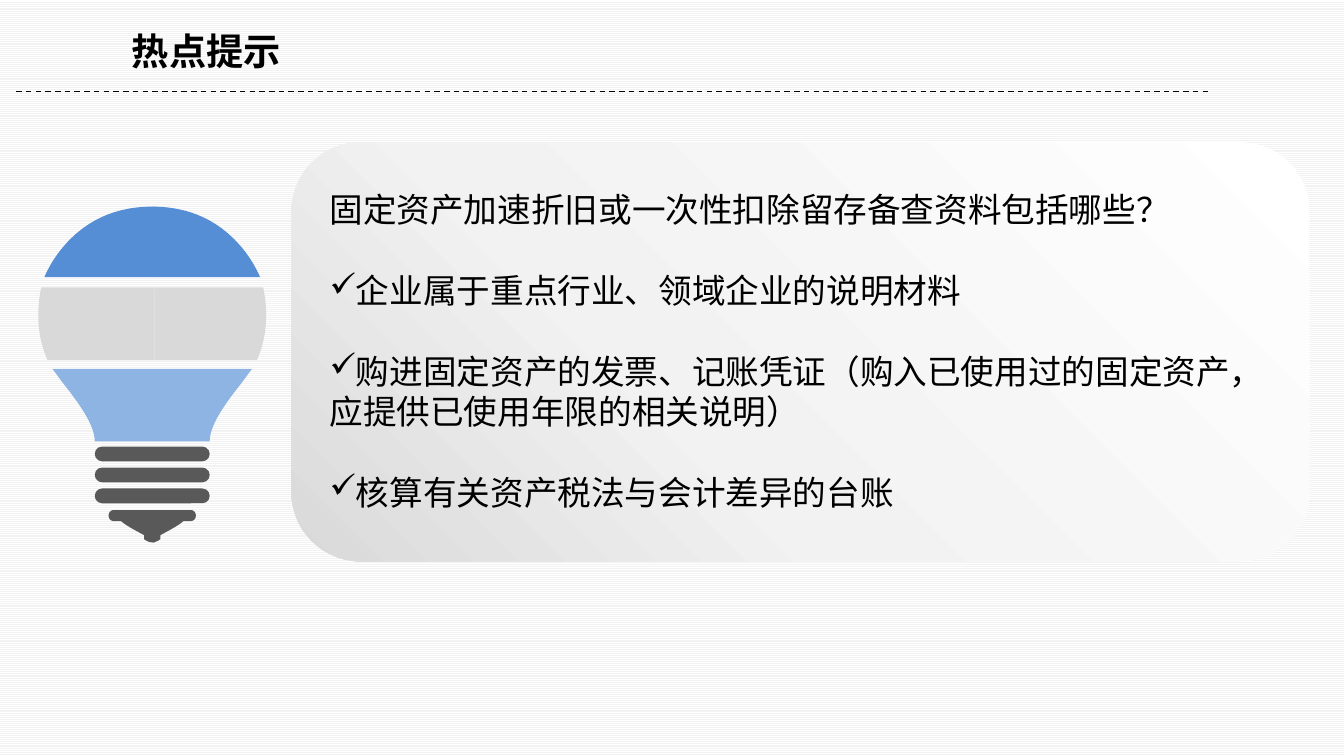
from copy import deepcopy

from lxml import etree
from pptx import Presentation
from pptx import util as u
from pptx.dml.color import RGBColor
from pptx.enum import dml, shapes, text
from pptx.oxml.ns import qn

W, H = 13.33, 7.5
FONT = "Noto Sans CJK SC"
LINE_PITCH = 28.8
QUESTION = "固定资产加速折旧或一次性扣除留存备查资料包括哪些？"
MATERIALS = [
    "企业属于重点行业、领域企业的说明材料",
    "购进固定资产的发票、记账凭证（购入已使用过的固定资产，应提供已使用年限的相关说明）",
    "核算有关资产税法与会计差异的台账",
]
BULB_UNITS = 227
BULB_AXIS, BULB_SEAM = 114, 116
BULB_BANDS = [
    ("558ED5", (0, 0), [[(31, 0), (59, 10), (81, 32)], [(92, 43), (101, 56), (107, 70)]]),
    ("D9D9D9", (110, 80), [[(112, 89), (113, 98), (113, 108)], [(113, 124), (110, 138), (104, 152)]]),
    ("8EB4E3", (99, 161), [[(95, 166), (91, 172), (87, 177)], [(68, 201), (57, 219), (57, 233)]]),
    ("595959", (38, 301), [[(45, 301), (45, 312), (38, 312)], [(31, 312)],
                           [(25, 317), (17, 321), (8, 326)], [(8, 330)],
                           [(5, 332), (3, 333), (0, 333)]]),
]


def rgb(code):
    """Turn a hex string into a colour."""
    return RGBColor.from_string(code)


def paint(sp, color):
    """Fill a shape with one colour, without line or shadow."""
    sp.shadow.inherit = False
    sp.fill.solid()
    sp.fill.fore_color.rgb = rgb(color)
    sp.line.fill.background()


def write(p, words, **formats):
    """Write one run of text with the slide's font."""
    r = p.add_run()
    r.text = words
    for name, value in {"name": FONT, **formats}.items():
        setattr(r.font, name, value)
    r.font.color.rgb = rgb("000000")
    etree.SubElement(r.font._element, qn("a:ea"), typeface=FONT)


def background(s):
    """Cover the slide with thin grey stripes."""
    fill = s.background.fill
    fill.patterned()
    fill.pattern = dml.MSO_PATTERN.NARROW_HORIZONTAL
    fill.fore_color.rgb = rgb("F2F2F2")
    fill.back_color.rgb = rgb("FFFFFF")


def header(s, x, y, w, h):
    """Place the title above a dashed rule at the bottom of the box."""
    tf = s.shapes.add_textbox(u.Inches(x + 1.05), u.Inches(y), u.Inches(1.68), u.Inches(0.55)).text_frame
    tf.word_wrap = False
    p = tf.paragraphs[0]
    p.line_spacing = u.Pt(32.4)
    write(p, "热点提示", size=u.Pt(26.6), bold=True)
    rule = s.shapes.add_connector(shapes.MSO_CONNECTOR.STRAIGHT, u.Inches(x), u.Inches(y + h),
                                  u.Inches(x + w), u.Inches(y + h))
    rule.line.color.rgb = rgb("000000")
    rule.line.width = u.Pt(1)
    rule.line.dash_style = dml.MSO_LINE.DASH
    etree.SubElement(rule._element.spPr, qn("a:effectLst"))


def panel(s, x, y, w, h):
    """Draw the shaded rounded panel with the question and its checklist."""
    sp = s.shapes.add_shape(shapes.MSO_SHAPE.ROUNDED_RECTANGLE, *map(u.Inches, (x, y, w, h)))
    paint(sp, "FFFFFF")
    sp.fill.gradient()
    sp.fill.gradient_angle = 225
    stops = sp._element.spPr.find(qn("a:gradFill")).find(qn("a:gsLst"))
    stops.append(deepcopy(stops[-1]))
    for stop, (position, color) in zip(sp.fill.gradient_stops,
                                       [(0, "FFFFFF"), (0.62, "F2F2F2"), (1, "D9D9D9")]):
        stop.position = position
        stop.color.rgb = rgb(color)

    tf = s.shapes.add_textbox(*map(u.Inches, (x + 0.28, y + 0.42, w - 0.39, h - 0.6))).text_frame
    tf.word_wrap = True
    tf.vertical_anchor = text.MSO_ANCHOR.TOP
    for i, words in enumerate([QUESTION, *MATERIALS]):
        p = tf.add_paragraph() if i else tf.paragraphs[0]
        p.line_spacing = u.Pt(LINE_PITCH)
        if i:
            p.space_before = u.Pt(LINE_PITCH)
            pPr = p._p.get_or_add_pPr()
            pPr.set("marL", "0")
            pPr.set("indent", "0")
            etree.SubElement(pPr, qn("a:buChar"), char="✓")
        write(p, words, size=u.Pt(24))


def trace(start, segments, steps=12):
    """Return the points along a chain of lines and Bezier curves."""
    points = [start]
    for segment in segments:
        if len(segment) == 1:
            points += segment
            continue
        curve = [points[-1], *segment]
        for k in range(1, steps + 1):
            t = k / steps
            weights = [(1 - t) ** 3, 3 * t * (1 - t) ** 2, 3 * t * t * (1 - t), t ** 3]
            points.append(tuple(sum(c * q[axis] for c, q in zip(weights, curve)) for axis in (0, 1)))
    return points


def bulb(s, x, y, w):
    """Draw a light bulb from mirrored half bands and three coils."""
    unit = w / BULB_UNITS
    for color, start, segments in BULB_BANDS:
        profile = trace(start, segments)
        for side in (-1, 1):
            outline = [(BULB_SEAM, profile[0][1]),
                       *((BULB_AXIS + side * px, py) for px, py in profile),
                       (BULB_SEAM, profile[-1][1])]
            points = [(u.Inches(x + px * unit), u.Inches(y + py * unit)) for px, py in outline]
            fb = s.shapes.build_freeform(*points[0])
            fb.add_line_segments(points[1:], close=True)
            paint(fb.convert_to_shape(), color)
    for i in range(3):
        coil = s.shapes.add_shape(shapes.MSO_SHAPE.ROUNDED_RECTANGLE, u.Inches(x + 57 * unit),
                                  u.Inches(y + (238 + 20.8 * i) * unit),
                                  u.Inches(114 * unit), u.Inches(14.7 * unit))
        coil.adjustments[0] = 0.5
        paint(coil, "595959")


def main():
    """Build the slide and save it."""
    prs = Presentation()
    prs.slide_width, prs.slide_height = u.Inches(W), u.Inches(H)
    s = prs.slides.add_slide(prs.slide_layouts[6])
    background(s)
    panel(s, 2.89, 1.41, 10.1, 4.16)
    header(s, 0.16, 0.22, 11.83, 0.69)
    bulb(s, 0.37, 2.05, 2.27)
    prs.save("out.pptx")


if __name__ == "__main__":
    main()
